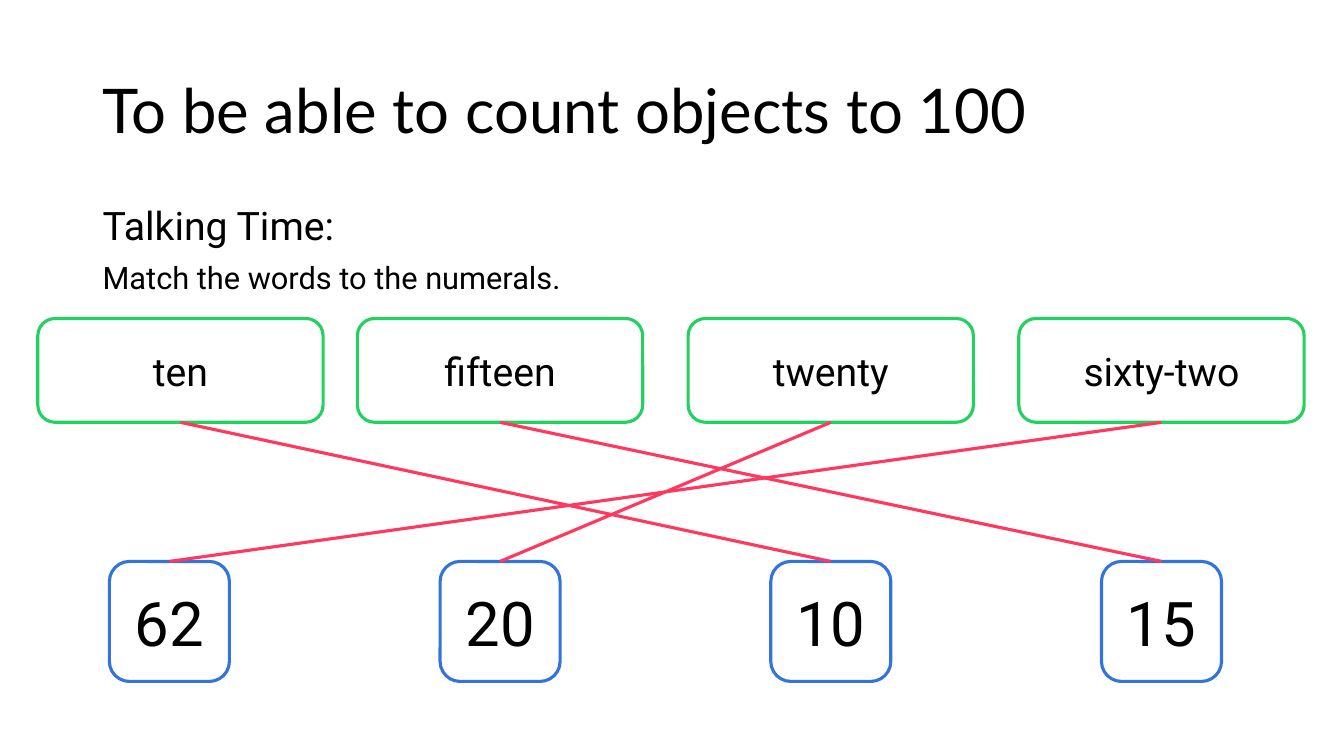
import pptx
import pptx.util
import pptx.dml.color
import pptx.enum.shapes
import pptx.enum.text
import pptx.oxml.ns
import lxml.etree
from pptx.util import Inches

# Content
TITLE = "To be able to count objects to 100"
INSTRUCTIONS = [("Talking Time:", "heading"), ("Match the words to the numerals.", "body")]
WORDS = ["ten", "fifteen", "twenty", "sixty-two"]
NUMERALS = ["62", "20", "10", "15"]
ANSWERS = {"ten": "10", "fifteen": "15", "twenty": "20", "sixty-two": "62"}

THEME = {
    "text": "000000", "paper": "FFFFFF",
    "word": "23D160", "numeral": "3273DC", "match": "FF3860",
    "title_font": "Lato", "body_font": "Roboto",
    "title": 44, "numeral_size": 44, "heading": 28, "body": 22, "stroke": 2.25,
}

# Layout: both rows share column centres; the first word sits slightly right
COLUMN_STEP = 3.28
NUMERAL_CENTRES = [1.68 + COLUMN_STEP * column for column in range(4)]
WORD_CENTRES = [1.79] + NUMERAL_CENTRES[1:]
WORD_TOP, WORD_WIDTH, WORD_HEIGHT = 3.16, 2.83, 1.03
NUMERAL_TOP, NUMERAL_SIDE = 5.57, 1.19

MIDDLE = pptx.enum.text.MSO_ANCHOR.MIDDLE


def colour(key):
    return pptx.dml.color.RGBColor.from_string(THEME[key])


def add_run(paragraph, text, size, font="body_font"):
    run = paragraph.add_run()
    run.text = text
    run.font.name = THEME[font]
    run.font.size = pptx.util.Pt(THEME[size])
    run.font.color.rgb = colour("text")


def add_text_frame(slide, left, top, width, height):
    frame = slide.shapes.add_textbox(
        Inches(left), Inches(top), Inches(width), Inches(height)).text_frame
    frame.word_wrap = True
    return frame


def add_card(slide, text, centre, top, width, height, outline, size):
    card = slide.shapes.add_shape(
        pptx.enum.shapes.MSO_SHAPE.ROUNDED_RECTANGLE,
        Inches(centre - width / 2), Inches(top), Inches(width), Inches(height))
    card.shadow.inherit = False
    card.fill.solid()
    card.fill.fore_color.rgb = colour("paper")
    card.line.color.rgb = colour(outline)
    card.line.width = pptx.util.Pt(THEME["stroke"])
    card.text_frame.word_wrap = True
    card.text_frame.vertical_anchor = MIDDLE
    paragraph = card.text_frame.paragraphs[0]
    paragraph.alignment = pptx.enum.text.PP_ALIGN.CENTER
    add_run(paragraph, text, size)


def add_match(slide, word_centre, numeral_centre):
    match = slide.shapes.add_connector(
        pptx.enum.shapes.MSO_CONNECTOR.STRAIGHT,
        Inches(word_centre), Inches(WORD_TOP + WORD_HEIGHT),
        Inches(numeral_centre), Inches(NUMERAL_TOP))
    match.line.color.rgb = colour("match")
    match.line.width = pptx.util.Pt(THEME["stroke"])
    lxml.etree.SubElement(match._element.spPr, pptx.oxml.ns.qn("a:effectLst"))


def main():
    deck = pptx.Presentation()
    deck.slide_width, deck.slide_height = Inches(13.33), Inches(7.5)
    slide = deck.slides.add_slide(deck.slide_layouts[6])
    slide.background.fill.solid()
    slide.background.fill.fore_color.rgb = colour("paper")

    # Title
    title = add_text_frame(slide, 0.92, 0.4, 9.6, 1.45)
    title.vertical_anchor = MIDDLE
    title.paragraphs[0].line_spacing = 0.9
    add_run(title.paragraphs[0], TITLE, "title", "title_font")

    # Instructions
    instructions = add_text_frame(slide, 0.92, 2, 11.5, 4.76)
    for index, (text, size) in enumerate(INSTRUCTIONS):
        paragraph = instructions.add_paragraph() if index else instructions.paragraphs[0]
        paragraph.line_spacing = 0.9
        if index:
            paragraph.space_before = pptx.util.Pt(10)
        add_run(paragraph, text, size)

    # Numeral and word cards
    for numeral, centre in zip(NUMERALS, NUMERAL_CENTRES):
        add_card(slide, numeral, centre, NUMERAL_TOP, NUMERAL_SIDE, NUMERAL_SIDE,
                 "numeral", "numeral_size")
    for word, centre in zip(WORDS, WORD_CENTRES):
        add_card(slide, word, centre, WORD_TOP, WORD_WIDTH, WORD_HEIGHT,
                 "word", "heading")

    # Lines from each word to its numeral
    for word, centre in zip(WORDS, WORD_CENTRES):
        add_match(slide, centre, NUMERAL_CENTRES[NUMERALS.index(ANSWERS[word])])

    deck.save("out.pptx")


if __name__ == "__main__":
    main()
